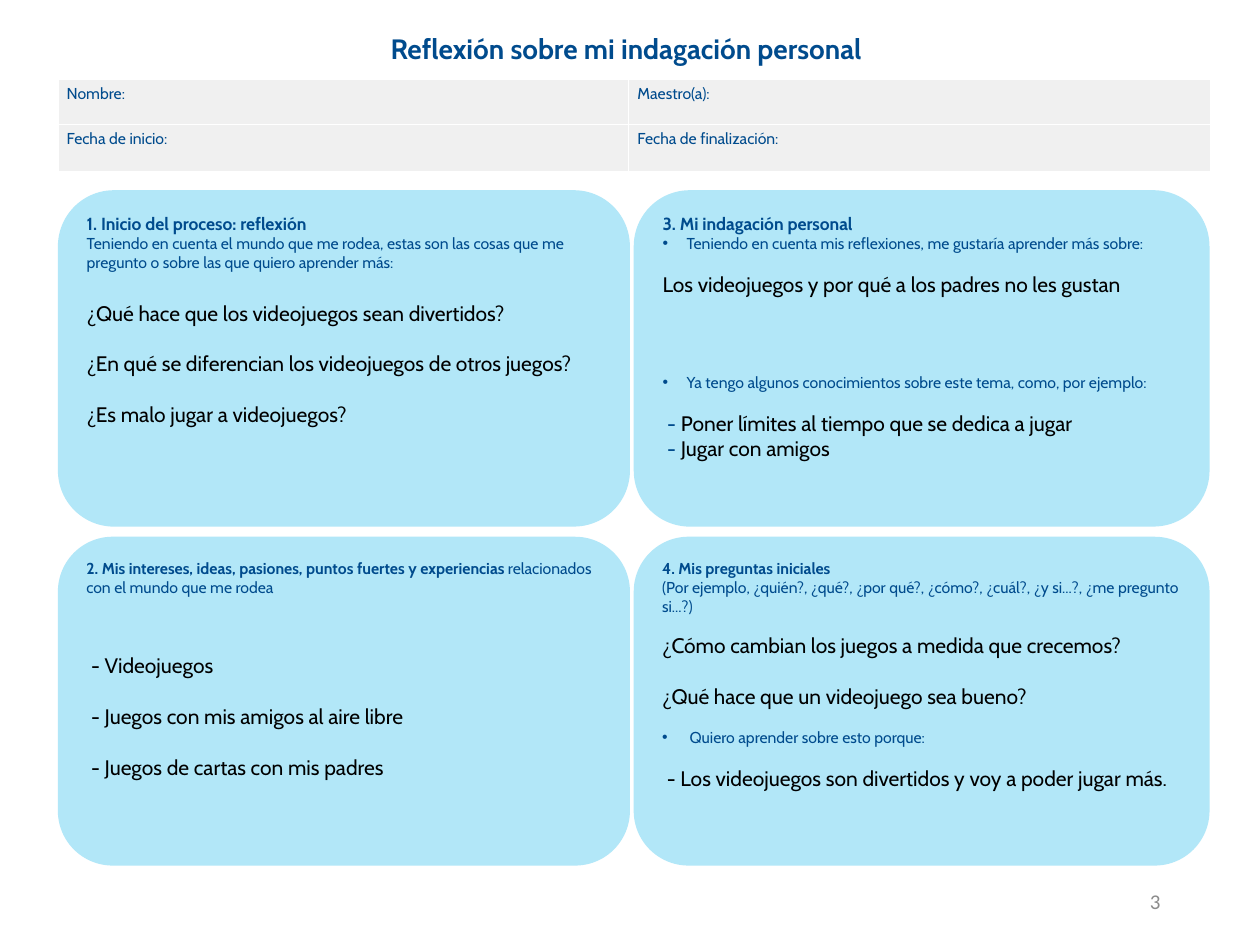
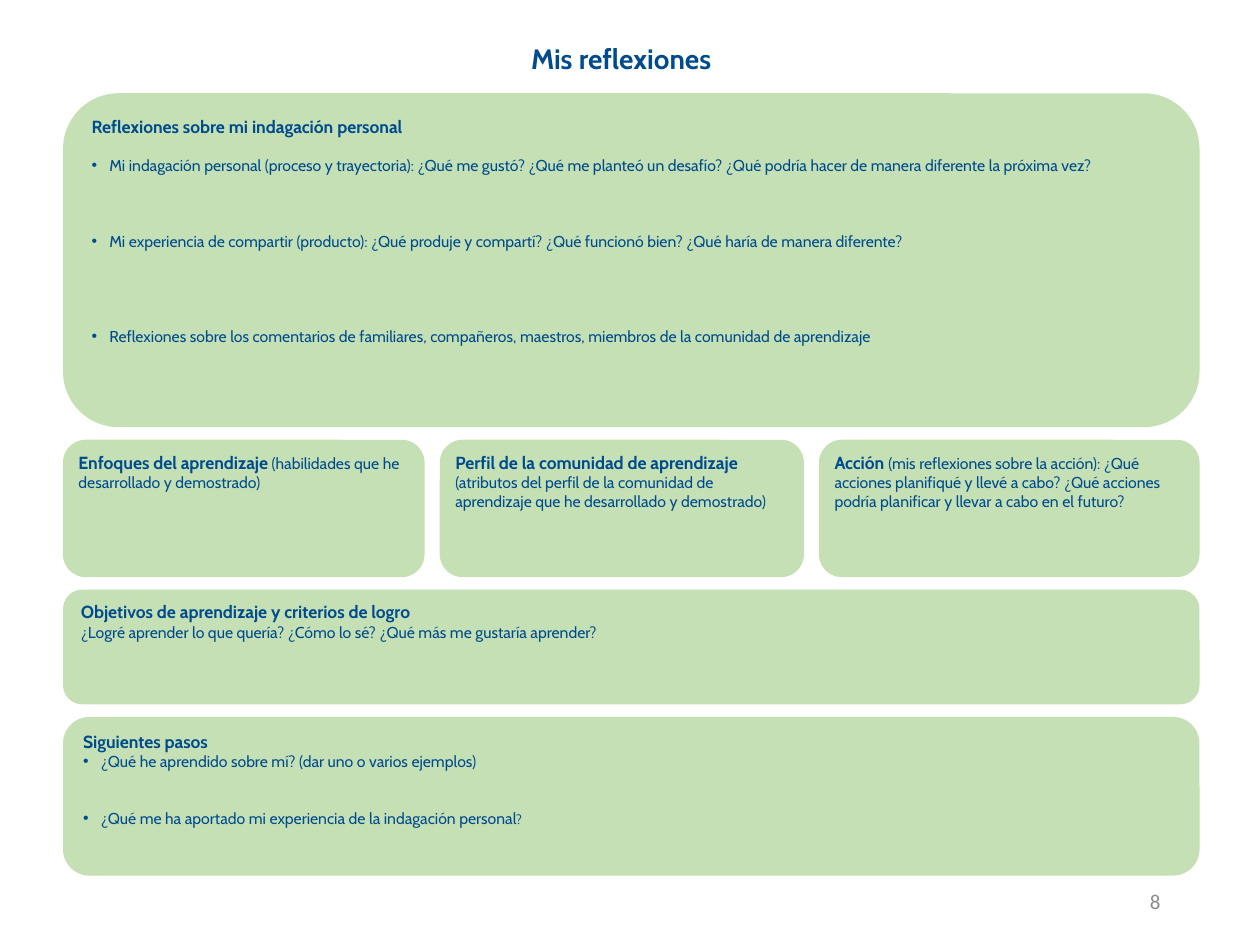
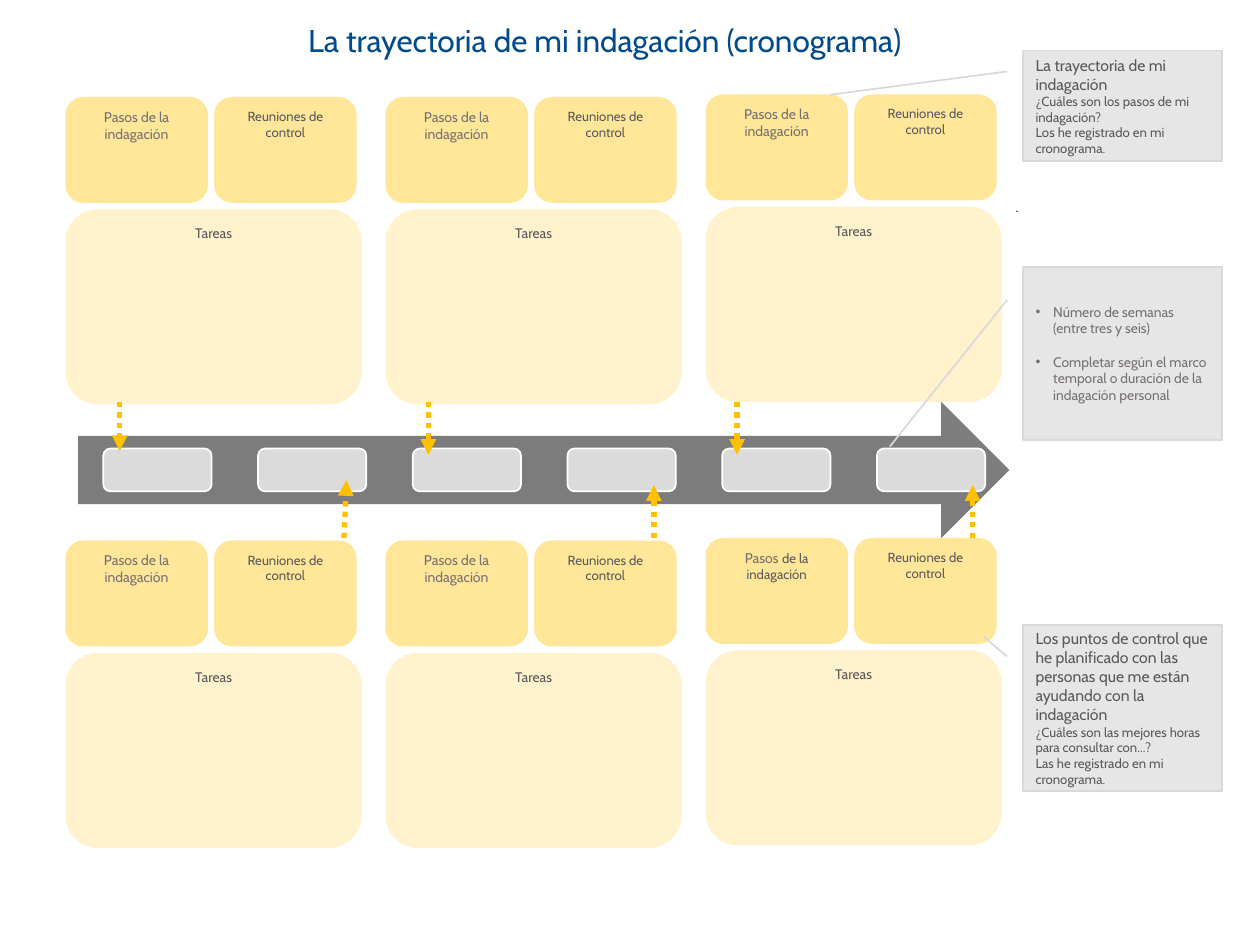
from dataclasses import dataclass
from itertools import product

from lxml.etree import SubElement
from pptx import Presentation
from pptx.dml.color import RGBColor
from pptx.enum.dml import MSO_LINE
from pptx.enum.shapes import MSO_CONNECTOR, MSO_SHAPE
from pptx.enum.text import MSO_ANCHOR, MSO_AUTO_SIZE, PP_ALIGN
from pptx.oxml.ns import qn
from pptx.util import Inches, Pt


@dataclass(frozen=True)
class Style:
    """Character format of a run."""
    size: float
    color: str
    bold: bool = False
    font: str = "Cabin"


class Theme:
    """Colours and type styles shared by the slides."""
    navy, black, white = "004B8D", "000000", "FFFFFF"
    dark_gray, gray = "595959", "767171"
    sky, green, table = "B2E7F8", "C5E0B4", "F0F0F0"
    step, task, dots = "FFE699", "FFF2CC", "FFC000"
    arrow, week, note, note_line = "7C7C7C", "DBDBDB", "E7E6E6", "D9D9D9"
    title = Style(16, navy, True)
    light_title = Style(18, navy)
    heading = Style(10, navy, True)
    small_heading = Style(9, navy, True)
    prompt = Style(9, navy)
    small_prompt = Style(7.5, navy)
    answer = Style(12, black)
    dash = Style(12, navy)
    page = Style(12, "8C8C8C", font="Calibri")
    step_text = Style(8, gray)
    small_text = Style(7.5, dark_gray)
    task_text = Style(7.9, dark_gray)
    note_heading = Style(9, dark_gray)
    note_list = Style(7.9, gray)
    dot = Style(6.8, black, font="Arial")
    default_inset, tight_inset = (0.1, 0.05), (0.07, 0.04)


@dataclass(frozen=True)
class Box:
    """Rectangle in inches."""
    left: float
    top: float
    width: float
    height: float

    def inside(self, left, top, width, height):
        """Return a box placed relative to this one."""
        return Box(self.left + left, self.top + top, width, height)

    def lengths(self):
        """Return the four lengths for a shape call."""
        return [Inches(value) for value in (self.left, self.top, self.width, self.height)]


@dataclass(frozen=True)
class Line:
    """Paragraph made of (text, style) runs, with space before and hanging bullet."""
    runs: tuple
    before: float = 0
    bullet: float = 0
    align: PP_ALIGN = PP_ALIGN.LEFT


def line(text, style, before=0, bullet=0, align=PP_ALIGN.LEFT):
    """Return a paragraph of a single run."""
    return Line(((text, style),), before, bullet, align)


def grid(left, top, widths, heights, column_gap, row_gap):
    """Return the boxes of a grid, row by row."""
    lefts = [left + sum(widths[:i]) + i * column_gap for i in range(len(widths))]
    tops = [top + sum(heights[:i]) + i * row_gap for i in range(len(heights))]
    return [Box(x, y, width, height)
            for (y, height), (x, width) in product(zip(tops, heights), zip(lefts, widths))]


def assign(target, values):
    """Set attributes from a dict."""
    for name, value in values.items():
        setattr(target, name, value)


def add_bullet(paragraph, hang):
    """Give a paragraph a round bullet with a hanging indent."""
    properties = paragraph._p.get_or_add_pPr()
    properties.set("marL", str(Inches(hang)))
    properties.set("indent", str(-Inches(hang)))
    SubElement(properties, qn("a:buFont"), typeface="Arial")
    SubElement(properties, qn("a:buChar"), char="•")


def add_run(paragraph, text, style):
    """Add a formatted run to a paragraph."""
    run = paragraph.add_run()
    run.text = text
    assign(run.font, {"name": style.font, "size": Pt(style.size), "bold": style.bold})
    run.font.color.rgb = RGBColor.from_string(style.color)


def set_margins(target, inset):
    """Set the side and edge margins of a text frame or cell."""
    side, edge = map(Inches, inset)
    assign(target, {"margin_left": side, "margin_right": side,
                    "margin_top": edge, "margin_bottom": edge})


def write(frame, lines, anchor=MSO_ANCHOR.TOP, inset=Theme.default_inset):
    """Fill a text frame with formatted paragraphs."""
    assign(frame, {"word_wrap": True, "auto_size": MSO_AUTO_SIZE.NONE,
                   "vertical_anchor": anchor})
    set_margins(frame, inset)
    for index, content in enumerate(lines):
        paragraph = frame.add_paragraph() if index else frame.paragraphs[0]
        assign(paragraph, {"alignment": content.align, "space_before": Pt(content.before)})
        if content.bullet:
            add_bullet(paragraph, content.bullet)
        for text, style in content.runs:
            add_run(paragraph, text, style)


def add_box(slide, box, fill, lines=(), kind=MSO_SHAPE.ROUNDED_RECTANGLE, outline=None, **text):
    """Add a filled shape with optional outline and text."""
    shape = slide.shapes.add_shape(kind, *box.lengths())
    shape.shadow.inherit = False
    shape.fill.solid()
    shape.fill.fore_color.rgb = RGBColor.from_string(fill)
    if outline:
        shape.line.color.rgb = RGBColor.from_string(outline)
        shape.line.width = Pt(1)
    else:
        shape.line.fill.background()
    write(shape.text_frame, lines, **text)
    return shape


def add_text(slide, box, content, **text):
    """Add a text box of one paragraph."""
    write(slide.shapes.add_textbox(*box.lengths()).text_frame, [content], **text)


def start_slide(presentation, title, style, box, number=None):
    """Add a slide with its title and page number."""
    slide = presentation.slides.add_slide(presentation.slide_layouts[5])
    shape = slide.shapes.title
    assign(shape, dict(zip(("left", "top", "width", "height"), box.lengths())))
    write(shape.text_frame, [line(title, style, align=PP_ALIGN.CENTER)])
    if number:
        add_text(slide, Box(7.06, 6.95, 2.25, 0.4),
                 line(number, Theme.page, align=PP_ALIGN.RIGHT), anchor=MSO_ANCHOR.MIDDLE)
    return slide


def add_details_table(slide, box, labels, widths, heights):
    """Add the table with the learner's details."""
    table = slide.shapes.add_table(len(heights), len(widths), *box.lengths()).table
    assign(table, {"first_row": False, "horz_banding": False})
    for column, width in zip(table.columns, widths):
        column.width = Inches(width)
    for row, height in zip(table.rows, heights):
        row.height = Inches(height)
    for cell, label in zip(table.iter_cells(), labels):
        properties = cell._tc.get_or_add_tcPr()
        for side in ("lnL", "lnR", "lnT", "lnB"):
            border = SubElement(properties, qn(f"a:{side}"), w=str(Pt(1)))
            SubElement(SubElement(border, qn("a:solidFill")), qn("a:srgbClr"), val=Theme.white)
        cell.fill.solid()
        cell.fill.fore_color.rgb = RGBColor.from_string(Theme.table)
        set_margins(cell, Theme.tight_inset)
        add_run(cell.text_frame.paragraphs[0], label, Theme.prompt)


def build_inquiry(presentation):
    """Build the personal inquiry slide."""
    slide = start_slide(presentation, "Reflexión sobre mi indagación personal",
                        Theme.title, Box(-0.03, 0.2, 10, 0.37), "3")
    heading, small_heading = Theme.heading, Theme.small_heading
    prompt, answer, dash = Theme.prompt, Theme.answer, Theme.dash
    panels = [
        [line("1. Inicio del proceso: reflexión", heading),
         line("Teniendo en cuenta el mundo que me rodea, estas son las cosas que me "
              "pregunto o sobre las que quiero aprender más:", prompt),
         line("¿Qué hace que los videojuegos sean divertidos?", answer, 16.4),
         line("¿En qué se diferencian los videojuegos de otros juegos?", answer, 14.5),
         line("¿Es malo jugar a videojuegos?", answer, 14.5)],
        [line("3. Mi indagación personal", heading),
         line("Teniendo en cuenta mis reflexiones, me gustaría aprender más sobre:",
              prompt, bullet=0.19),
         line("Los videojuegos y por qué a los padres no les gustan", answer, 10.9),
         line("Ya tengo algunos conocimientos sobre este tema, como, por ejemplo:",
              prompt, 43, 0.19),
         Line(((" - ", dash), ("Poner límites al tiempo que se dedica a jugar", answer)), 10.9),
         Line(((" - ", dash), ("Jugar con amigos", answer)))],
        [Line((("2. Mis intereses, ideas, pasiones, puntos fuertes y experiencias",
                small_heading),
               (" relacionados con el mundo que me rodea", prompt))),
         line(" - Videojuegos", answer, 32),
         line(" - Juegos con mis amigos al aire libre", answer, 14.5),
         line(" - Juegos de cartas con mis padres", answer, 14.5)],
        [line("4. Mis preguntas iniciales", small_heading),
         line("(Por ejemplo, ¿quién?, ¿qué?, ¿por qué?, ¿cómo?, ¿cuál?, ¿y si...?, "
              "¿me pregunto si...?)", prompt),
         line("¿Cómo cambian los juegos a medida que crecemos?", answer, 9.6),
         line("¿Qué hace que un videojuego sea bueno?", answer, 14.5),
         line(" Quiero aprender sobre esto porque:", prompt, 10.8, 0.19),
         line(" - Los videojuegos son divertidos y voy a poder jugar más.", answer, 10.9)],
    ]
    boxes = grid(0.46, 1.51, (4.54, 4.57), (2.67, 2.61), 0.03, 0.08)
    for box, lines in zip(boxes, panels):
        add_box(slide, box, Theme.sky, lines)
    add_details_table(slide, Box(0.46, 0.63, 9.15, 0.73),
                      ("Nombre:", "Maestro(a):", "Fecha de inicio:", "Fecha de finalización:"),
                      (4.53, 4.62), (0.36, 0.37))


def build_reflections(presentation):
    """Build the reflections slide."""
    slide = start_slide(presentation, "Mis reflexiones", Theme.title,
                        Box(-0.07, 0.28, 10, 0.37), "8")
    heading, prompt = Theme.heading, Theme.prompt
    inquiry, middle, goals, steps = grid(0.5, 0.74, (9.02,), (2.65, 1.09, 0.91, 1.26), 0, 0.1)
    add_box(slide, inquiry, Theme.green, [
        line("Reflexiones sobre mi indagación personal", heading),
        line("Mi indagación personal (proceso y trayectoria): ¿Qué me gustó? ¿Qué me planteó "
             "un desafío? ¿Qué podría hacer de manera diferente la próxima vez?",
             prompt, 10.9, 0.14),
        line("Mi experiencia de compartir (producto): ¿Qué produje y compartí? "
             "¿Qué funcionó bien? ¿Qué haría de manera diferente?", prompt, 32.6, 0.14),
        line("Reflexiones sobre los comentarios de familiares, compañeros, maestros, "
             "miembros de la comunidad de aprendizaje", prompt, 43.5, 0.14)])
    topics = (
        ("Enfoques del aprendizaje", " (habilidades que he desarrollado y demostrado)"),
        ("Perfil de la comunidad de aprendizaje",
         " (atributos del perfil de la comunidad de aprendizaje que he desarrollado "
         "y demostrado)"),
        ("Acción ", "(mis reflexiones sobre la acción): ¿Qué acciones planifiqué y llevé a "
         "cabo? ¿Qué acciones podría planificar y llevar a cabo en el futuro?"),
    )
    boxes = grid(middle.left, middle.top, (2.87, 2.89, 3.02), (middle.height,), 0.12, 0)
    for box, (name, detail) in zip(boxes, topics):
        add_box(slide, box, Theme.green, [Line(((name, heading), (detail, prompt)))],
                inset=Theme.tight_inset)
    add_box(slide, goals, Theme.green, [
        line("Objetivos de aprendizaje y criterios de logro", heading),
        line("¿Logré aprender lo que quería? ¿Cómo lo sé? ¿Qué más me gustaría aprender?",
             prompt)])
    add_box(slide, steps, Theme.green, [
        line("Siguientes pasos", heading),
        line("¿Qué he aprendido sobre mí? (dar uno o varios ejemplos)", prompt, bullet=0.14),
        Line((("¿Qué me ha aportado mi experiencia de la indagación personal", prompt),
              ("?", Theme.small_prompt)), 21.7, 0.14)])


def add_week_arrow(slide, box, weeks):
    """Add the time arrow with its evenly spaced week labels."""
    add_box(slide, box, Theme.arrow, kind=MSO_SHAPE.RIGHT_ARROW)
    pitch = 6.14 / (weeks - 1)
    for week in range(weeks):
        add_box(slide, box.inside(0.2 + week * pitch, 0.37, 0.86, 0.34),
                Theme.week, outline=Theme.white)


def add_stage(slide, box, step_runs):
    """Add the step, meeting and task cards of one stage."""
    cards = (
        (box.inside(0, 0, 1.13, 0.84), Theme.step, step_runs),
        (box.inside(1.18, 0, 1.13, 0.84), Theme.step,
         (("Reuniones de control", Theme.small_text),)),
        (box.inside(0, 0.89, box.width, 1.55), Theme.task, (("Tareas", Theme.task_text),)),
    )
    for card, fill, runs in cards:
        add_box(slide, card, fill, [Line(runs, align=PP_ALIGN.CENTER)])


def add_dotted_arrow(slide, *ends):
    """Add a dotted arrow between two points given in inches."""
    connector = slide.shapes.add_connector(MSO_CONNECTOR.STRAIGHT, *map(Inches, ends))
    connector.line.color.rgb = RGBColor.from_string(Theme.dots)
    assign(connector.line, {"width": Pt(3), "dash_style": MSO_LINE.ROUND_DOT})
    properties = connector._element.spPr
    SubElement(properties.find(qn("a:ln")), qn("a:tailEnd"), type="triangle")
    SubElement(properties, qn("a:effectLst"))


def add_note(slide, box, pointer, lines):
    """Add a side note whose pointer ends at a (down, across) share of its box."""
    shape = add_box(slide, box, Theme.note, lines, MSO_SHAPE.LINE_CALLOUT_1,
                    Theme.note_line, anchor=MSO_ANCHOR.MIDDLE)
    for index, value in enumerate((0.19, -0.08, *pointer)):
        shape.adjustments[index] = value


def build_timeline(presentation):
    """Build the timeline slide."""
    slide = start_slide(presentation, "La trayectoria de mi indagación (cronograma)",
                        Theme.light_title, Box(-0.2, 0.12, 10, 0.57))
    add_text(slide, Box(7.96, 1.54, 1.88, 0.21), line(".", Theme.dot))
    add_week_arrow(slide, Box(0.62, 3.19, 7.39, 1.08), 6)
    usual = (("Pasos de la indagación", Theme.step_text),)
    last = (("Pasos ", Theme.step_text), ("de la indagación", Theme.small_text))
    for row, column in product(range(2), range(3)):
        rise = 0.02 if column == 2 else 0
        box = Box(0.52 + 2.54 * column, 0.77 + 3.52 * row - rise, 2.35, 2.44)
        add_stage(slide, box, last if (row, column) == (1, 2) else usual)
    for start, end, start_top, end_top in (
            (0.95, 0.95, 3.19, 3.58), (3.4, 3.4, 3.19, 3.61), (5.85, 5.85, 3.19, 3.61),
            (2.73, 2.75, 4.27, 3.81), (5.19, 5.19, 4.27, 3.85), (7.72, 7.72, 4.27, 3.85)):
        add_dotted_arrow(slide, start, start_top, end, end_top)
    heading, detail, item = Theme.note_heading, Theme.small_text, Theme.note_list
    notes = (
        (0.4, 0.88, (0.4, -0.97), [
            line("La trayectoria de mi indagación", heading),
            line("¿Cuáles son los pasos de mi indagación?", detail),
            line("Los he registrado en mi cronograma.", detail)]),
        (2.12, 1.37, (1.04, -0.67), [
            line("Número de semanas (entre tres y seis)", item, bullet=0.14),
            line("Completar según el marco temporal o duración de la indagación personal",
                 item, 9.6, 0.14)]),
        (4.96, 1.32, (0.07, -0.2), [
            line("Los puntos de control que he planificado con las personas que me están "
                 "ayudando con la indagación", heading),
            line("¿Cuáles son las mejores horas para consultar con...?", detail),
            line("Las he registrado en mi cronograma.", detail)]),
    )
    for top, height, pointer, lines in notes:
        add_note(slide, Box(8.12, top, 1.58, height), pointer, lines)


def main():
    """Build and save the presentation."""
    presentation = Presentation()
    assign(presentation, {"slide_width": Inches(10), "slide_height": Inches(7.5)})
    for build in (build_inquiry, build_reflections, build_timeline):
        build(presentation)
    presentation.save("out.pptx")


if __name__ == "__main__":
    main()
